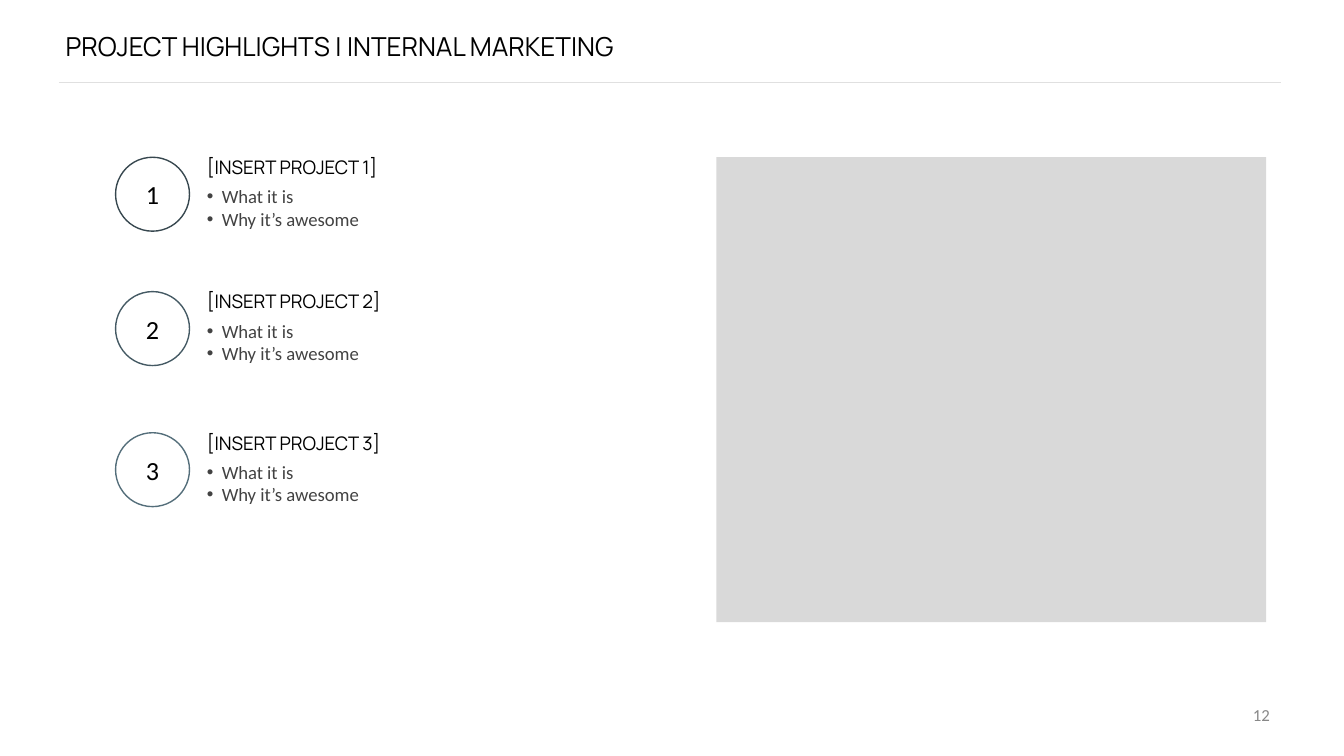
from lxml import etree
from pptx import Presentation
from pptx.dml.color import RGBColor
from pptx.enum.shapes import MSO_CONNECTOR as Connector, MSO_SHAPE as Shape
from pptx.enum.text import MSO_ANCHOR as Anchor, MSO_AUTO_SIZE as AutoSize, PP_ALIGN as Align
from pptx.oxml.ns import qn
from pptx.util import Pt

PROJECTS = [
    ("[INSERT PROJECT 1]", "37474F", 84.24),
    ("[INSERT PROJECT 2]", "455A64", 156.24),
    ("[INSERT PROJECT 3]", "546E7A", 231.84),
]
PROJECT_POINTS = ["What it is", "Why it’s awesome"]
CIRCLE_SIZE = 39.6


def colour(hex_code):
    return RGBColor.from_string(hex_code)


def write(frame, lines, size, font_name, hex_code, align=Align.LEFT,
          anchor=Anchor.TOP, inset=3.6, wrap=True):
    frame.auto_size = AutoSize.NONE
    frame.word_wrap = wrap
    frame.vertical_anchor = anchor
    frame.margin_left = frame.margin_right = Pt(inset)
    frame.margin_top = frame.margin_bottom = Pt(inset)
    frame.text = "\n".join(lines)
    for paragraph in frame.paragraphs:
        paragraph.alignment = align
        for run in paragraph.runs:
            run.font.size = Pt(size)
            run.font.name = font_name
            run.font.color.rgb = colour(hex_code)


def add_text(slide, box, lines, *style, **layout):
    frame = slide.shapes.add_textbox(*map(Pt, box)).text_frame
    write(frame, lines, *style, **layout)
    return frame


def add_bullet(paragraph, indent):
    properties = paragraph._p.get_or_add_pPr()
    properties.set("marL", str(Pt(indent)))
    properties.set("indent", str(-Pt(indent)))
    etree.SubElement(properties, qn("a:buFont")).set("typeface", "Arial")
    etree.SubElement(properties, qn("a:buChar")).set("char", "•")


def add_header(slide, left, top, width, height):
    title = slide.shapes.title
    title.left, title.top = Pt(left + 3.6), Pt(top)
    title.width, title.height = Pt(480), Pt(height)
    write(title.text_frame, ["PROJECT HIGHLIGHTS | INTERNAL MARKETING"],
          14, "Manrope", "000000", anchor=Anchor.MIDDLE, inset=0)
    rule_y = Pt(top + 44.1)
    rule = slide.shapes.add_connector(
        Connector.STRAIGHT, Pt(left), rule_y, Pt(left + width), rule_y)
    rule.line.color.rgb = colour("E0E0E0")
    rule.line.width = Pt(0.75)
    etree.SubElement(rule._element.spPr, qn("a:effectLst"))


def add_project(slide, left, top, width, number, heading, outline):
    circle = slide.shapes.add_shape(
        Shape.OVAL, Pt(left), Pt(top), Pt(CIRCLE_SIZE), Pt(CIRCLE_SIZE))
    circle.shadow.inherit = False
    circle.fill.background()
    circle.line.color.rgb = colour(outline)
    circle.line.width = Pt(0.75)
    write(circle.text_frame, [str(number)], 14, "Calibri", "000000",
          align=Align.CENTER, anchor=Anchor.MIDDLE, inset=0)

    text_left = left + 45.4
    text_width = width - 45.4
    points = add_text(slide, (text_left, top + 11.5, text_width, 33.1),
                      PROJECT_POINTS, 10, "Calibri", "424242")
    for paragraph in points.paragraphs:
        add_bullet(paragraph, 7.9)
    add_text(slide, (text_left, top - 4.3, 103.5, 18), [heading],
             10, "Manrope", "000000", wrap=False)


def add_image_area(slide, left, top, width, height):
    area = slide.shapes.add_shape(
        Shape.RECTANGLE, Pt(left), Pt(top), Pt(width), Pt(height))
    area.shadow.inherit = False
    area.fill.solid()
    area.fill.fore_color.rgb = colour("D9D9D9")
    area.line.fill.background()


def add_page_number(slide, left, top, width, height):
    add_text(slide, (left, top, width, height), ["12"], 9, "Calibri", "888888",
             align=Align.RIGHT, anchor=Anchor.MIDDLE)


def main():
    deck = Presentation()
    deck.slide_width, deck.slide_height = Pt(720), Pt(405)
    slide = deck.slides.add_slide(deck.slide_layouts.get_by_name("Title Only"))
    add_header(slide, 31.5, 0, 654.8, 49)
    for number, (heading, outline, top) in enumerate(PROJECTS, 1):
        add_project(slide, 61.9, top, 298.1, number, heading, outline)
    add_image_area(slide, 383.8, 84.24, 294.5, 249.1)
    add_page_number(slide, 516.2, 373.7, 167.8, 18)
    deck.save("out.pptx")


if __name__ == "__main__":
    main()
